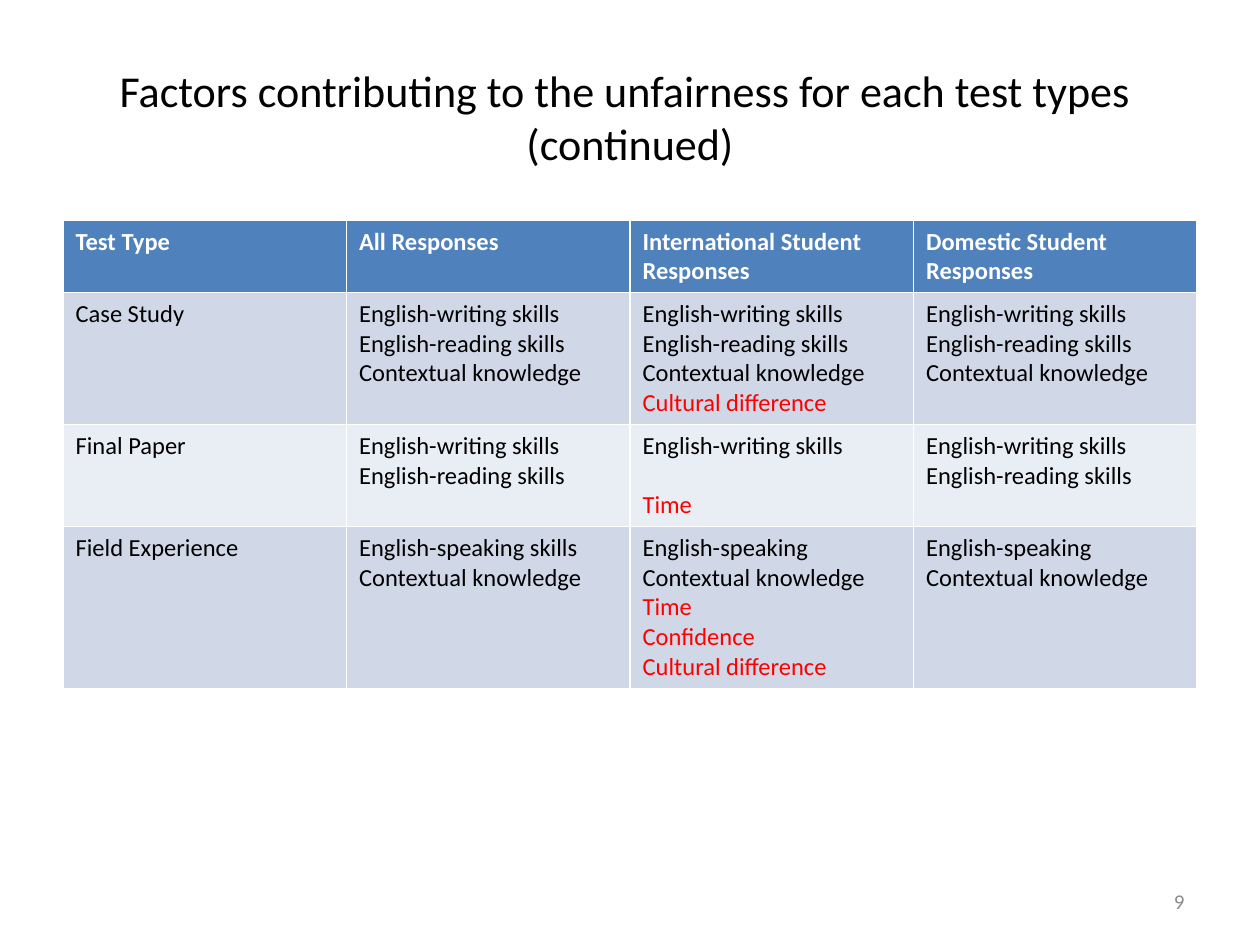
from pptx import Presentation
from pptx import util as u
from pptx.dml.color import RGBColor
from pptx.enum import text as t

# Content: a cell is a list of lines; a leading "!" marks a factor in red
TITLE = "Factors contributing to the unfairness for each test types \v(continued)"
PAGE = "9"
WRITE, READ = "English-writing skills", "English-reading skills"
SPEAK, KNOW = "English-speaking", "Contextual knowledge"
TIME, CULT = "!Time", "!Cultural difference"
HEAD = [["Test Type"], ["All Responses"],
        ["International Student Responses"], ["Domestic Student Responses"]]
BODY = [
    [["Case Study"], [WRITE, READ, KNOW], [WRITE, READ, KNOW, CULT],
     [WRITE, READ, KNOW]],
    [["Final Paper"], [WRITE, READ], [WRITE, TIME], [WRITE, READ]],
    [["Field Experience"], [SPEAK + " skills", KNOW],
     [SPEAK, KNOW, TIME, "!Confidence", CULT], [SPEAK, KNOW]],
]
LINES = [2, 4, 3, 5]  # text lines that each row holds
GAPS = {(2, 2, 1)}    # row, column, line with one open line above it

THEME = {
    "font": "Calibri", "title": 25.2, "cell": 14, "page": 12,
    "ink": "000000", "white": "FFFFFF", "red": "FF0000", "grey": "8C8C8C",
    "head": "4F81BD", "bands": ["D0D8E8", "E9EDF4"],
}
LEFT, WIDE, TOP = 36, 648, 126
LINE, PAD = 17.05, 7.2


def style(para, size, color, bold=False):
    form = {"name": THEME["font"], "size": u.Pt(size), "bold": bold}
    for key, val in form.items():
        setattr(para.font, key, val)
    para.font.color.rgb = RGBColor.from_string(color)


def label(slide, box, words, size, color, align):
    frame = slide.shapes.add_textbox(*map(u.Pt, box)).text_frame
    form = {"word_wrap": True, "vertical_anchor": t.MSO_ANCHOR.MIDDLE}
    for key, val in form.items():
        setattr(frame, key, val)
    para = frame.paragraphs[0]
    para.text, para.alignment = words, align
    style(para, size, color)


def fill(cell, lines, row, col):
    tone = THEME["bands"][(row - 1) % 2] if row else THEME["head"]
    cell.fill.solid()
    cell.fill.fore_color.rgb = RGBColor.from_string(tone)
    frame = cell.text_frame
    for i, words in enumerate(lines):
        para = frame.add_paragraph() if i else frame.paragraphs[0]
        para.text = words.lstrip("!")
        ink = "white" if row == 0 else "red" if words[0] == "!" else "ink"
        style(para, THEME["cell"], THEME[ink], row == 0)
        if (row, col, i) in GAPS:
            para.space_before = u.Pt(LINE)


def main():
    deck = Presentation()
    deck.slide_width, deck.slide_height = u.Pt(720), u.Pt(540)
    slide = deck.slides.add_slide(deck.slide_layouts[6])

    # Title
    label(slide, (LEFT, 21.6, WIDE, 90), TITLE, THEME["title"],
          THEME["ink"], t.PP_ALIGN.CENTER)

    # Table of factors
    rows = [HEAD] + BODY
    highs = [n * LINE + PAD for n in LINES]
    grid = slide.shapes.add_table(
        len(rows), len(HEAD), *map(u.Pt, (LEFT, TOP, WIDE, sum(highs)))).table
    for r, (row, high) in enumerate(zip(rows, highs)):
        grid.rows[r].height = u.Pt(high)
        for c, lines in enumerate(row):
            fill(grid.cell(r, c), lines, r, c)

    # Page number
    label(slide, (516, 500.5, 168, 28.75), PAGE, THEME["page"],
          THEME["grey"], t.PP_ALIGN.RIGHT)
    deck.save("out.pptx")


if __name__ == "__main__":
    main()
